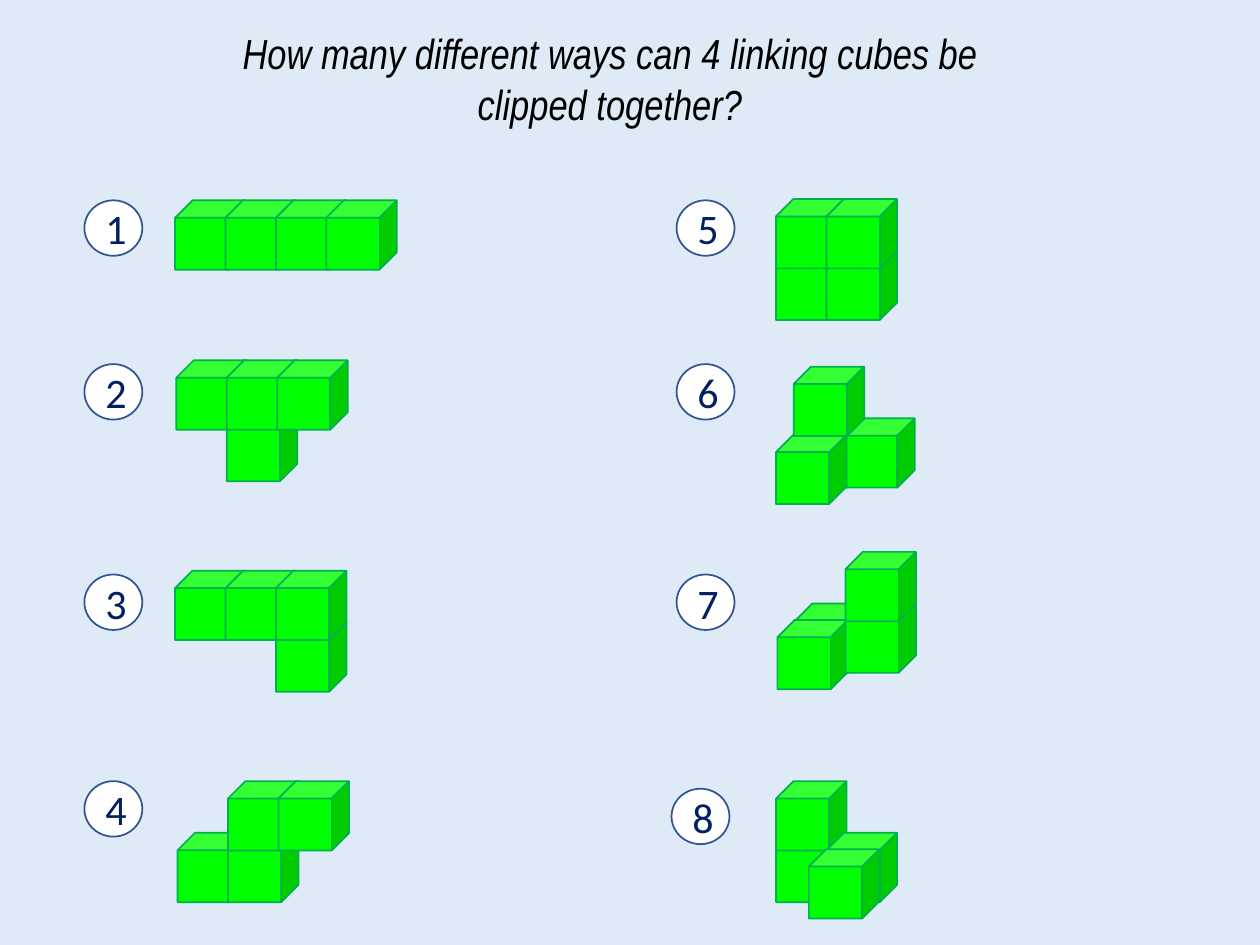
from pptx import Presentation
from pptx.dml.color import RGBColor
from pptx.enum.shapes import MSO_SHAPE
from pptx.enum.text import MSO_ANCHOR, MSO_AUTO_SIZE, PP_ALIGN
from pptx.util import Inches, Pt

SKY = RGBColor(0xDE, 0xEB, 0xF7)
BLACK = RGBColor(0, 0, 0)
WHITE = RGBColor(0xFF, 0xFF, 0xFF)
NAVY = RGBColor(0x00, 0x20, 0x60)
BLUE = RGBColor(0x32, 0x54, 0x91)
LIME = RGBColor(0x00, 0xFF, 0x00)
GREEN = RGBColor(0x00, 0xB0, 0x50)

TITLE = "How many different ways can 4 linking cubes be clipped together?"
TITLE_FONT = {"name": "Arial Narrow", "size": Pt(24), "italic": True}
NUMBER_FONT = {"name": "Calibri", "size": Pt(24)}
CUBE_W, CUBE_H = 0.56, 0.55
STEP_X, STEP_Y = 0.4, 0.41
DEPTH_X, DEPTH_Y = 0.14, 0.13
BADGE_W, BADGE_H = 0.46, 0.44

ARRANGEMENTS = [
    ((0.67, 1.59), (1.39, 1.59), [(0, 0, 0), (1, 0, 0), (2, 0, 0), (3, 0, 0)]),
    ((0.67, 2.89), (1.4, 3.27), [(1, 0, 0), (0, 1, 0), (1, 1, 0), (2, 1, 0)]),
    ((0.67, 4.56), (1.39, 4.94), [(2, 0, 0), (0, 1, 0), (1, 1, 0), (2, 1, 0)]),
    ((0.67, 6.2), (1.41, 6.61), [(0, 0, 0), (1, 0, 0), (1, 1, 0), (2, 1, 0)]),
    ((5.37, 1.59), (6.16, 1.99), [(0, 0, 0), (1, 0, 0), (0, 1, 0), (1, 1, 0)]),
    ((5.37, 2.89), (6.3, 3.32), [(0, 0, 0), (1, 0, 0), (0, 0, 1), (0, 1, 0)]),
    ((5.37, 4.56), (6.31, 4.79), [(0, 0, 0), (0, 0, 1), (1, 0, 0), (1, 1, 0)]),
    ((5.33, 6.26), (6.16, 6.61), [(0, 0, 0), (0, 1, 0), (1, 0, 0), (1, 0, 1)]),
]


def write(tf, text, font, color):
    """Put one centred, formatted run into a text frame."""
    p = tf.paragraphs[0]
    p.alignment = PP_ALIGN.CENTER
    r = p.add_run()
    r.text = text
    for name, value in font.items():
        setattr(r.font, name, value)
    r.font.color.rgb = color


def add_outlined(shapes, kind, box, fill, line):
    """Add a flat preset shape with a thin outline."""
    sp = shapes.add_shape(kind, *map(Inches, box))
    sp.shadow.inherit = False
    sp.fill.solid()
    sp.fill.fore_color.rgb = fill
    sp.line.color.rgb = line
    sp.line.width = Pt(1)
    return sp


def add_title(s, box):
    """Add the question at the top of the slide."""
    tf = s.shapes.add_textbox(*map(Inches, box)).text_frame
    tf.word_wrap = True
    tf.auto_size = MSO_AUTO_SIZE.SHAPE_TO_FIT_TEXT
    write(tf, TITLE, TITLE_FONT, BLACK)


def add_arrangement(s, number, badge, base, cubes):
    """Group the cubes, given as (column, level, forward), with their numbered badge."""
    shapes = s.shapes.add_group_shape().shapes
    for column, level, forward in cubes:
        x = base[0] + column * STEP_X - forward * DEPTH_X
        y = base[1] - level * STEP_Y + forward * DEPTH_Y
        add_outlined(shapes, MSO_SHAPE.CUBE, (x, y, CUBE_W, CUBE_H), LIME, GREEN)
    sp = add_outlined(shapes, MSO_SHAPE.OVAL, (*badge, BADGE_W, BADGE_H), WHITE, BLUE)
    sp.text_frame.vertical_anchor = MSO_ANCHOR.MIDDLE
    write(sp.text_frame, str(number), NUMBER_FONT, NAVY)


def main():
    """Build and save the slide."""
    prs = Presentation()
    prs.slide_width, prs.slide_height = Inches(10), Inches(7.5)
    s = prs.slides.add_slide(prs.slide_layouts[6])
    s.background.fill.solid()
    s.background.fill.fore_color.rgb = SKY
    add_title(s, (1.54, 0.17, 6.6, 0.91))
    for number, (badge, base, cubes) in enumerate(ARRANGEMENTS, 1):
        add_arrangement(s, number, badge, base, cubes)
    prs.save("out.pptx")


if __name__ == "__main__":
    main()
